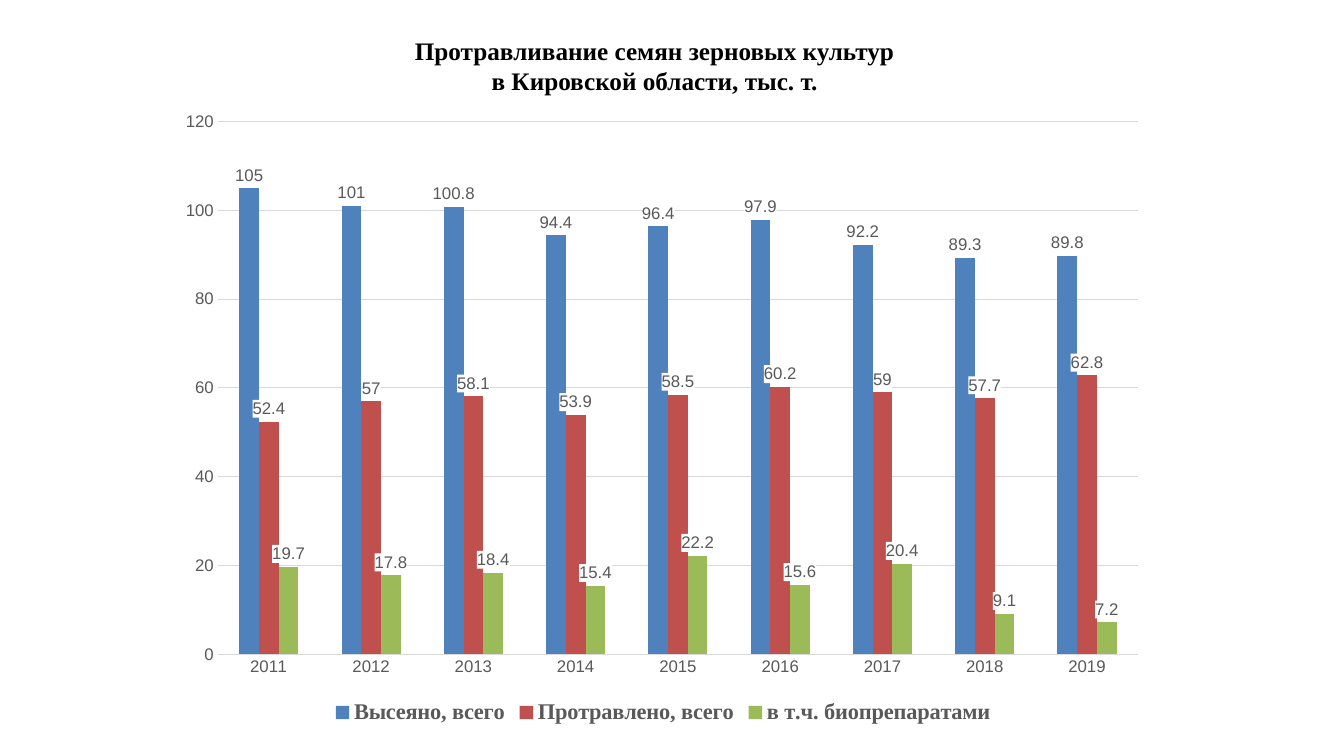
from dataclasses import dataclass

from lxml.etree import fromstring
from pptx import Presentation
from pptx.chart.chart import Chart
from pptx.chart.data import CategoryChartData
from pptx.chart.series import BarSeries
from pptx.dml.color import RGBColor
from pptx.enum.chart import (XL_CHART_TYPE, XL_LABEL_POSITION,
                             XL_LEGEND_POSITION, XL_TICK_MARK)
from pptx.enum.text import MSO_ANCHOR, MSO_AUTO_SIZE, PP_ALIGN
from pptx.oxml.ns import qn
from pptx.slide import Slide
from pptx.text.text import Font
from pptx.util import Pt

SERIF, SANS = "Times New Roman", "Arial"
GREY, GRID = "595959", "D9D9D9"
CHART_NS = "http://schemas.openxmlformats.org/drawingml/2006/chart"
DRAWING_NS = "http://schemas.openxmlformats.org/drawingml/2006/main"
YEARS = [str(year) for year in range(2011, 2020)]


@dataclass(frozen=True)
class SeedSeries:
    name: str
    tonnes: tuple[float, ...]
    color: str


SEED_SERIES = [
    SeedSeries("Высеяно, всего",
               (105, 101, 100.8, 94.4, 96.4, 97.9, 92.2, 89.3, 89.8), "4F81BD"),
    SeedSeries("Протравлено, всего",
               (52.4, 57, 58.1, 53.9, 58.5, 60.2, 59, 57.7, 62.8), "C0504D"),
    SeedSeries("в т.ч. биопрепаратами",
               (19.7, 17.8, 18.4, 15.4, 22.2, 15.6, 20.4, 9.1, 7.2), "9BBB59"),
]


def rgb(color: str) -> RGBColor:
    return RGBColor.from_string(color)


def style_font(font: Font, name: str, size: float, color: str,
               bold: bool = False) -> None:
    font.name, font.size, font.bold = name, Pt(size), bold
    font.color.rgb = rgb(color)


def add_heading(slide: Slide) -> None:
    heading = slide.shapes.title
    heading.left, heading.top = Pt(181.4), Pt(21.6)
    heading.width, heading.height = Pt(572.4), Pt(72.7)
    frame = heading.text_frame
    frame.text = ("Протравливание семян зерновых культур\n"
                  "в Кировской области, тыс. т.")
    frame.word_wrap = True
    frame.auto_size = MSO_AUTO_SIZE.NONE
    frame.vertical_anchor = MSO_ANCHOR.TOP
    for line in frame.paragraphs:
        line.alignment = PP_ALIGN.CENTER
        for run in line.runs:
            style_font(run.font, SERIF, 18, "000000", bold=True)


def style_axes(chart: Chart) -> None:
    years, tonnes = chart.category_axis, chart.value_axis
    for axis in (years, tonnes):
        axis.major_tick_mark = axis.minor_tick_mark = XL_TICK_MARK.NONE
        style_font(axis.tick_labels.font, SANS, 12, GREY)
    tonnes.minimum_scale, tonnes.maximum_scale, tonnes.major_unit = 0, 120, 20
    tonnes.has_major_gridlines = True
    tonnes.format.line.fill.background()
    for line in (years.format.line, tonnes.major_gridlines.format.line):
        line.color.rgb = rgb(GRID)
        line.width = Pt(0.75)


def style_series(bars: BarSeries, seed: SeedSeries) -> None:
    bars.format.fill.solid()
    bars.format.fill.fore_color.rgb = rgb(seed.color)
    bars.invert_if_negative = False
    labels = bars.data_labels
    labels.show_value = True
    labels.position = XL_LABEL_POSITION.OUTSIDE_END
    style_font(labels.font, SANS, 12, GREY)
    # White backing keeps the values readable over neighbouring bars
    backing = fromstring(
        f'<c:spPr xmlns:c="{CHART_NS}" xmlns:a="{DRAWING_NS}"><a:solidFill>'
        '<a:srgbClr val="FFFFFF"/></a:solidFill></c:spPr>')
    bars.data_labels.font  # text properties precede the position element
    labels_xml = bars.data_labels._element
    labels_xml.find(qn("c:txPr")).addprevious(backing)


def place_plot(chart: Chart, x: float, y: float, w: float, h: float) -> None:
    plot_area = chart.element.find(f".//{qn('c:plotArea')}")
    for layout in plot_area.findall(qn("c:layout")):
        plot_area.remove(layout)
    plot_area.insert(0, fromstring(
        f'<c:layout xmlns:c="{CHART_NS}"><c:manualLayout>'
        '<c:layoutTarget val="inner"/><c:xMode val="edge"/><c:yMode val="edge"/>'
        f'<c:x val="{x}"/><c:y val="{y}"/><c:w val="{w}"/><c:h val="{h}"/>'
        '</c:manualLayout></c:layout>'))


def add_seed_chart(slide: Slide) -> None:
    data = CategoryChartData()
    data.categories = YEARS
    for seed in SEED_SERIES:
        data.add_series(seed.name, seed.tonnes)
    chart = slide.shapes.add_chart(
        XL_CHART_TYPE.COLUMN_CLUSTERED,
        Pt(120.2), Pt(73.4), Pt(707), Pt(447.8), data).chart
    chart.has_title = False
    style_font(chart.font, SANS, 10, "000000")

    # Columns
    columns = chart.plots[0]
    columns.gap_width, columns.overlap = 219, 0
    columns.vary_by_categories = False
    for bars, seed in zip(columns.series, SEED_SERIES):
        style_series(bars, seed)
    style_axes(chart)
    place_plot(chart, 0.05, 0.03, 0.93, 0.85)

    # Legend
    chart.has_legend = True
    chart.legend.position = XL_LEGEND_POSITION.BOTTOM
    chart.legend.include_in_layout = False
    style_font(chart.legend.font, SERIF, 16, GREY, bold=True)


def main() -> None:
    deck = Presentation()
    deck.slide_width, deck.slide_height = Pt(960), Pt(540)
    slide = deck.slides.add_slide(deck.slide_layouts.get_by_name("Title Only"))
    add_heading(slide)
    add_seed_chart(slide)
    deck.save("out.pptx")


if __name__ == "__main__":
    main()
